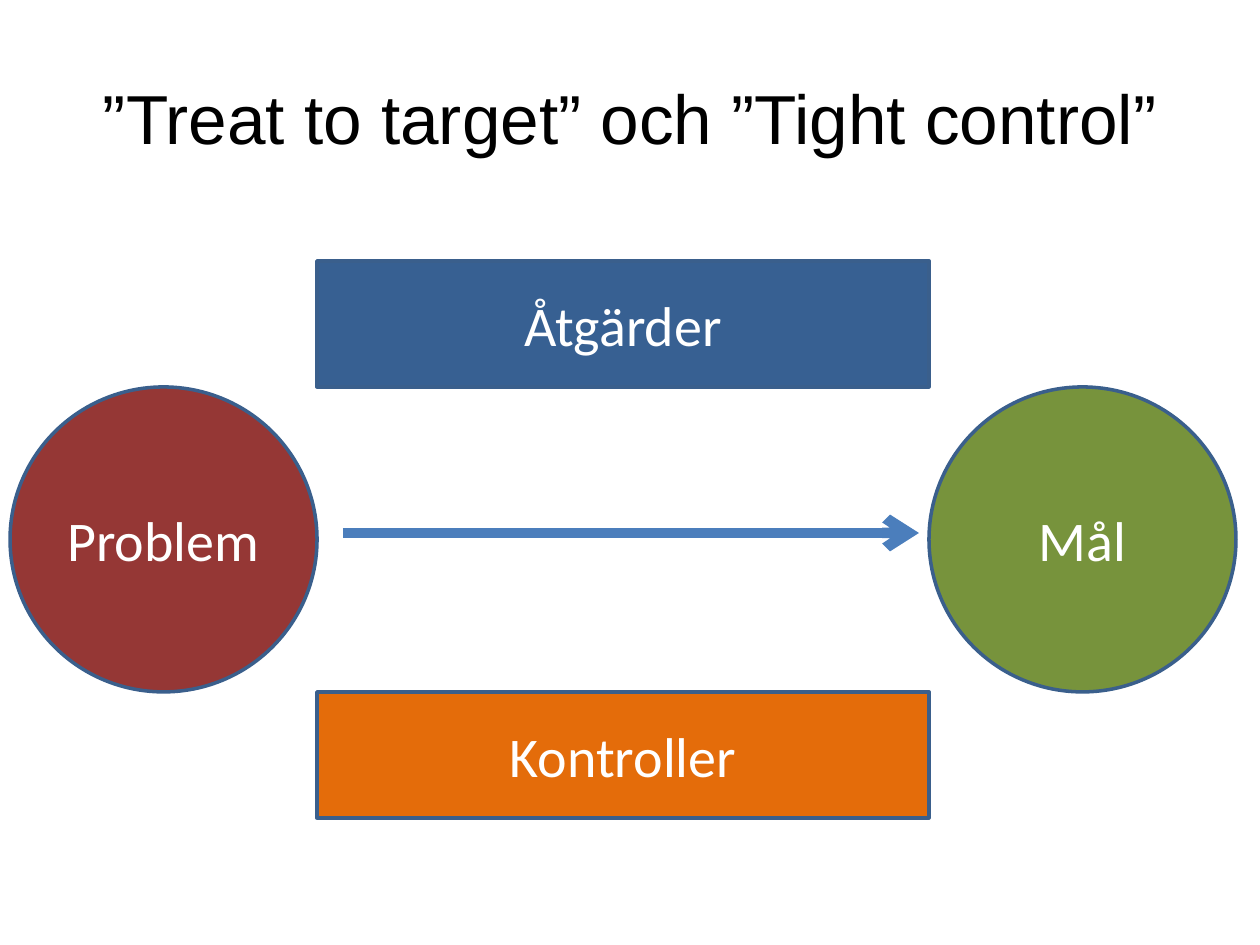
from lxml.etree import SubElement
from pptx import Presentation
from pptx.dml.color import RGBColor
from pptx.enum.shapes import MSO_CONNECTOR, MSO_SHAPE
from pptx.enum.text import MSO_ANCHOR, PP_ALIGN
from pptx.oxml.ns import qn
from pptx.util import Pt

PX = 914400 / 126  # EMU per px


def px(length):
    return round(length * PX)


def color(hex_code):
    return RGBColor.from_string(hex_code)


def write(frame, text, font, size, hex_code):
    frame.text = text
    frame.word_wrap = True
    frame.vertical_anchor = MSO_ANCHOR.MIDDLE
    paragraph = frame.paragraphs[0]
    paragraph.alignment = PP_ALIGN.CENTER
    run_font = paragraph.runs[0].font
    run_font.name, run_font.size = font, Pt(size)
    run_font.color.rgb = color(hex_code)


def add_heading(slide, left, top, width, height):
    heading = slide.shapes.title
    heading.left, heading.top = px(left), px(top)
    heading.width, heading.height = px(width), px(height)
    write(heading.text_frame, "”Treat to target” och ”Tight control”", "Arial", 39.6, "000000")


def add_block(slide, preset, text, fill, left, top, width, height):
    block = slide.shapes.add_shape(preset, px(left), px(top), px(width), px(height))
    block.shadow.inherit = False
    block.fill.solid()
    block.fill.fore_color.rgb = color(fill)
    block.line.color.rgb = color("3A5F8C")
    block.line.width = Pt(2)
    write(block.text_frame, text, "Calibri", 32, "FFFFFF")


def add_progress_arrow(slide, start, end, y):
    arrow = slide.shapes.add_connector(MSO_CONNECTOR.STRAIGHT, px(start), px(y), px(end), px(y))
    arrow.line.color.rgb = color("4B7EBC")
    arrow.line.width = Pt(6)
    SubElement(arrow.line._get_or_add_ln(), qn("a:tailEnd"), type="arrow")
    SubElement(arrow._element.spPr, qn("a:effectLst"))


def add_treatment_diagram(slide, left, top, width, height):
    circle_width, bar_height = 307, 126
    bar_width = width - 2 * circle_width
    circle_height = height - 2 * bar_height
    bar_left = left + circle_width
    goal_left = bar_left + bar_width
    circle_top = top + bar_height
    control_top = circle_top + circle_height

    # Problem on the left, checks below and measures above
    add_block(slide, MSO_SHAPE.OVAL, "Problem", "953735",
              left, circle_top, circle_width, circle_height)
    add_block(slide, MSO_SHAPE.RECTANGLE, "Kontroller", "E46C0A",
              bar_left, control_top, bar_width, bar_height)
    add_block(slide, MSO_SHAPE.RECTANGLE, "Åtgärder", "376092",
              bar_left, top, bar_width, bar_height)

    # Arrow towards the goal
    add_progress_arrow(slide, bar_left + 26, goal_left - 10, top + 272)
    add_block(slide, MSO_SHAPE.OVAL, "Mål", "77933C",
              goal_left, circle_top, circle_width, circle_height)


def main():
    presentation = Presentation()
    presentation.slide_width, presentation.slide_height = px(1260), px(945)
    slide = presentation.slides.add_slide(presentation.slide_layouts[5])  # title only
    add_heading(slide, 63, 38, 1134, 157)
    add_treatment_diagram(slide, 10, 261, 1226, 557)
    presentation.save("out.pptx")


if __name__ == "__main__":
    main()
